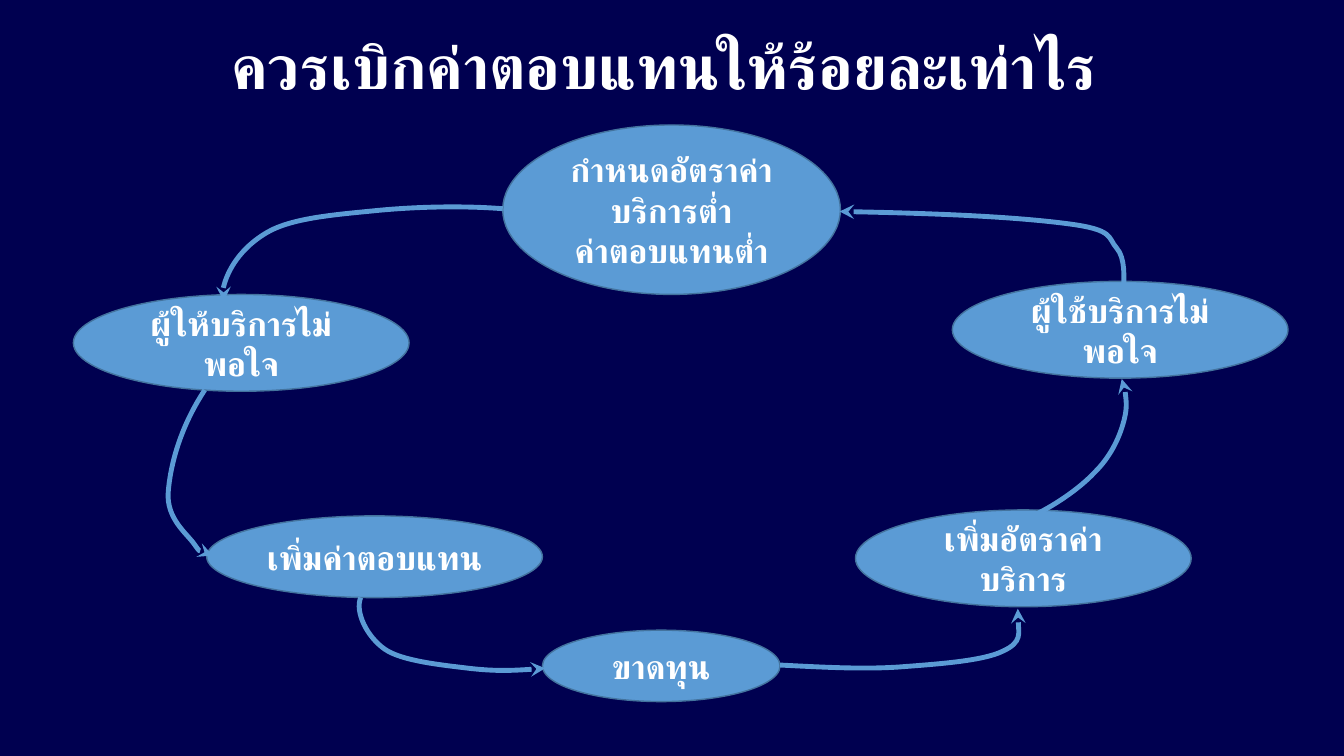
import lxml.etree
import pptx
import pptx.util
import pptx.oxml.ns
import pptx.dml.color
import pptx.enum.text
import pptx.enum.shapes
from dataclasses import dataclass

Cm = pptx.util.Cm
Pt = pptx.util.Pt
qn = pptx.oxml.ns.qn


@dataclass(frozen=True)
class Theme:
    back: str = "000050"
    text: str = "FFFFFF"
    fill: str = "5B9BD5"
    edge: str = "43739E"
    font: str = "Calibri"
    head: int = 44
    body: int = 24
    thin: float = 1
    thick: float = 3.5


THEME = Theme()

STEPS = [
    (10.82, 0, 8.51, 4.27, ["กำหนดอัตราค่าบริการต่ำ", "ค่าตอบแทนต่ำ"]),
    (0, 4.27, 8.46, 2.44, ["ผู้ให้บริการไม่พอใจ"]),
    (3.36, 9.85, 8.46, 2.06, ["เพิ่มค่าตอบแทน"]),
    (11.82, 12.73, 5.99, 1.8, ["ขาดทุน"]),
    (19.71, 9.7, 8.46, 2.44, ["เพิ่มอัตราค่าบริการ"]),
    (22.15, 3.94, 8.46, 2.44, ["ผู้ใช้บริการไม่พอใจ"]),
]

CURVES = [
    [(10.82, 2.11), (9.78, 2.03), (8.61, 2.06), (7.6, 2.16), (6.61, 2.26),
     (5.49, 2.34), (4.86, 2.72), (4.22, 3.1), (3.61, 4.04), (3.79, 4.44)],
    [(7.24, 11.91), (7.09, 12.27), (7.4, 12.9), (7.85, 13.21), (8.28, 13.51),
     (9.3, 13.61), (9.96, 13.69), (10.65, 13.77), (11.31, 13.74), (11.89, 13.69)],
    [(3.31, 6.68), (2.67, 7.65), (2.44, 8.61), (2.39, 9.25), (2.34, 9.91),
     (2.85, 10.29), (3.03, 10.54), (3.23, 10.82), (3.36, 10.85), (3.51, 10.85)],
    [(17.81, 13.61), (18.83, 13.66), (19.84, 13.72), (20.78, 13.66), (21.72, 13.59),
     (22.92, 13.51), (23.42, 13.26), (23.93, 13.03), (23.8, 12.39), (23.8, 12.19)],
    [(24.11, 9.88), (24.67, 9.63), (25.35, 9.17), (25.73, 8.76), (26.12, 8.38),
     (26.34, 7.92), (26.45, 7.54), (26.57, 7.14), (26.52, 6.53), (26.42, 6.4)],
    [(26.47, 4.04), (26.47, 3.91), (26.52, 3.35), (26.29, 3.1), (26.06, 2.84),
     (26.24, 2.64), (25.07, 2.49), (23.93, 2.34), (22.13, 2.23), (19.31, 2.18)],
]


def color(code):
    return pptx.dml.color.RGBColor.from_string(code)


def write(shape, lines, size=THEME.body, space=None):
    frame = shape.text_frame
    frame.word_wrap = True
    frame.auto_size = pptx.enum.text.MSO_AUTO_SIZE.NONE
    frame.vertical_anchor = pptx.enum.text.MSO_ANCHOR.MIDDLE
    for i, line in enumerate(lines):
        para = frame.add_paragraph() if i else frame.paragraphs[0]
        para.alignment = pptx.enum.text.PP_ALIGN.CENTER
        para.line_spacing = space
        run = para.add_run()
        run.text = line
        run.font.name = THEME.font
        run.font.size = Pt(size)
        run.font.bold = True
        run.font.color.rgb = color(THEME.text)


def outline(shape, code, width):
    shape.shadow.inherit = False
    shape.line.color.rgb = color(code)
    shape.line.width = Pt(width)


def title(slide, box, text):
    shape = slide.shapes.title
    shape.left, shape.top, shape.width, shape.height = map(Cm, box)
    write(shape, [text], size=THEME.head, space=0.9)


def oval(slide, box, lines):
    shape = slide.shapes.add_shape(pptx.enum.shapes.MSO_SHAPE.OVAL, *map(Cm, box))
    shape.fill.solid()
    shape.fill.fore_color.rgb = color(THEME.fill)
    outline(shape, THEME.edge, THEME.thin)
    write(shape, lines)


def arrow(slide, points):
    spots = [(Cm(x), Cm(y)) for x, y in points]
    maker = slide.shapes.build_freeform(*spots[0])
    maker.add_line_segments(spots[1:], close=False)
    shape = maker.convert_to_shape()
    shape.fill.background()
    outline(shape, THEME.fill, THEME.thick)
    track = next(shape.element.iter(qn("a:path")))
    legs = track.findall(qn("a:lnTo"))
    for i in range(0, len(legs), 3):
        curve = lxml.etree.SubElement(track, qn("a:cubicBezTo"))
        for leg in legs[i:i + 3]:
            curve.append(leg[0])
            track.remove(leg)
    line = next(shape.element.iter(qn("a:ln")))
    lxml.etree.SubElement(line, qn("a:tailEnd"), type="stealth")


def cycle(slide, box):
    left, top = box
    for x, y, wide, high, lines in STEPS:
        oval(slide, (left + x, top + y, wide, high), lines)
    for curve in CURVES:
        arrow(slide, [(left + x, top + y) for x, y in curve])


def main():
    deck = pptx.Presentation()
    deck.slide_width, deck.slide_height = Cm(33.87), Cm(19.05)
    slide = deck.slides.add_slide(deck.slide_layouts[5])
    slide.background.fill.solid()
    slide.background.fill.fore_color.rgb = color(THEME.back)
    title(slide, (2.34, 0.38, 29.21, 2.74), "ควรเบิกค่าตอบแทนให้ร้อยละเท่าไร ")
    cycle(slide, (1.85, 3.15))
    deck.save("out.pptx")


if __name__ == "__main__":
    main()
